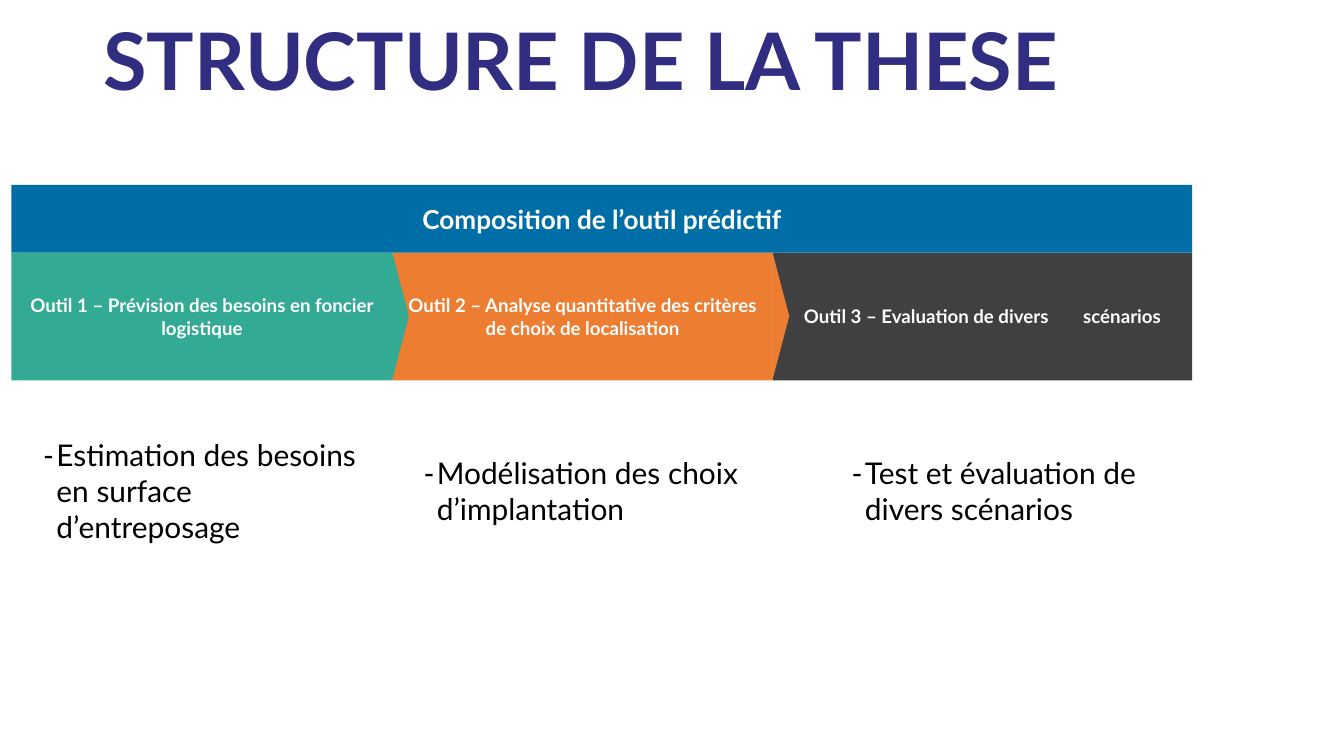
import pptx
import pptx.util
import pptx.dml.color
import pptx.enum.shapes
import pptx.enum.text
import pptx.oxml.ns
import lxml.etree

RGBColor = pptx.dml.color.RGBColor
SHAPE = pptx.enum.shapes.MSO_SHAPE
ALIGN = pptx.enum.text.PP_ALIGN
ANCHOR = pptx.enum.text.MSO_ANCHOR
AUTO_SIZE = pptx.enum.text.MSO_AUTO_SIZE

INDIGO = RGBColor(0x31, 0x2E, 0x81)
BLUE = RGBColor(0x00, 0x6E, 0xA6)
TEAL = RGBColor(0x33, 0xAA, 0x94)
ORANGE = RGBColor(0xED, 0x7D, 0x31)
GREY = RGBColor(0x40, 0x40, 0x40)
WHITE = RGBColor(0xFF, 0xFF, 0xFF)
BLACK = RGBColor(0x00, 0x00, 0x00)

FONT = "Lato"
EMU_PER_PX = 9144

TOOLS = [
    (["Outil 1 – Prévision des besoins en foncier logistique"], TEAL),
    (["Outil 2 – Analyse quantitative des critères de choix de localisation"], ORANGE),
    (["Outil 3 – Evaluation de divers", "scénarios"], GREY),
]
GOALS = [
    ("Estimation des besoins en surface d’entreposage", (55, 645, 492, 172)),
    ("Modélisation des choix d’implantation", (621, 672, 542, 118)),
    ("Test et évaluation de divers scénarios", (1258, 672, 482, 118)),
]


def px(n):
    return pptx.util.Emu(n * EMU_PER_PX)


def place(sp, x, y, w, h):
    sp.left, sp.top, sp.width, sp.height = px(x), px(y), px(w), px(h)


def add_text(p, text, size=20, color=WHITE, bold=True, spacing=0):
    r = p.add_run()
    r.text = text
    r.font.name = FONT
    r.font.size = pptx.util.Pt(size)
    r.font.bold = bold
    r.font.color.rgb = color
    if spacing:
        r.font._element.set("spc", str(spacing * 100))


def add_block(s, kind, box, color):
    sp = s.shapes.add_shape(kind, *map(px, box))
    sp.shadow.inherit = False
    sp.fill.solid()
    sp.fill.fore_color.rgb = color
    sp.line.fill.background()
    tf = sp.text_frame
    tf.word_wrap = True
    tf.vertical_anchor = ANCHOR.MIDDLE
    tf.paragraphs[0].alignment = ALIGN.CENTER
    return sp


def add_title(s, box):
    sp = s.shapes.title
    place(sp, *box)
    tf = sp.text_frame
    tf.auto_size = AUTO_SIZE.SHAPE_TO_FIT_TEXT
    tf.vertical_anchor = ANCHOR.TOP
    tf.margin_left = tf.margin_right = tf.margin_bottom = 0
    tf.margin_top = px(1)
    p = tf.paragraphs[0]
    p.alignment = ALIGN.LEFT
    p._p.get_or_add_pPr().set("marL", str(px(33)))
    add_text(p, "STRUCTURE DE LA THESE", size=85, color=INDIGO)


def add_tool_band(s, box, header_h=101, pointer=25):
    x, y, w, h = box
    top, row_h = y + header_h, h - header_h
    edges = [x, x + 567, x + 1133, x + w]
    for (parts, color), left, right in zip(TOOLS, edges, edges[1:]):
        sp = add_block(s, SHAPE.RECTANGLE, (left, top, right - left, row_h), color)
        p = sp.text_frame.paragraphs[0]
        for i, part in enumerate(parts):
            if i:
                add_text(p, " ", spacing=32)
            add_text(p, part)

    for (_, color), edge in zip(TOOLS, edges[1:-1]):
        left = edge + (pointer - row_h) // 2
        pointer_top = top + (row_h - pointer) // 2
        sp = add_block(s, SHAPE.ISOSCELES_TRIANGLE, (left, pointer_top, row_h, pointer), color)
        sp.rotation = 90

    sp = add_block(s, SHAPE.RECTANGLE, (x, y, w, header_h), BLUE)
    add_text(sp.text_frame.paragraphs[0], "Composition de l’outil prédictif", size=28)


def add_goal(sp, text, box):
    place(sp, *box)
    tf = sp.text_frame
    tf.word_wrap = True
    tf.auto_size = AUTO_SIZE.SHAPE_TO_FIT_TEXT
    tf.vertical_anchor = ANCHOR.TOP
    p = tf.paragraphs[0]
    pPr = p._p.get_or_add_pPr()
    pPr.set("marL", str(px(19)))
    pPr.set("indent", str(-px(19)))
    bullet = lxml.etree.SubElement(pPr, pptx.oxml.ns.qn("a:buChar"))
    bullet.set("char", "-")
    p.space_before = pptx.util.Pt(0)
    add_text(p, text, size=32, color=BLACK, bold=False)


def main():
    prs = pptx.Presentation()
    prs.slide_width, prs.slide_height = px(2000), px(1125)
    s = prs.slides.add_slide(prs.slide_layouts.get_by_name("Comparison"))
    add_title(s, (121, 16, 1757, 144))
    add_tool_band(s, (17, 275, 1757, 291))
    bodies = list(s.placeholders)[1:]
    for sp, (text, box) in zip(bodies, GOALS):
        add_goal(sp, text, box)
    for sp in bodies[len(GOALS):]:
        sp._element.getparent().remove(sp._element)
    prs.save("out.pptx")


if __name__ == "__main__":
    main()
